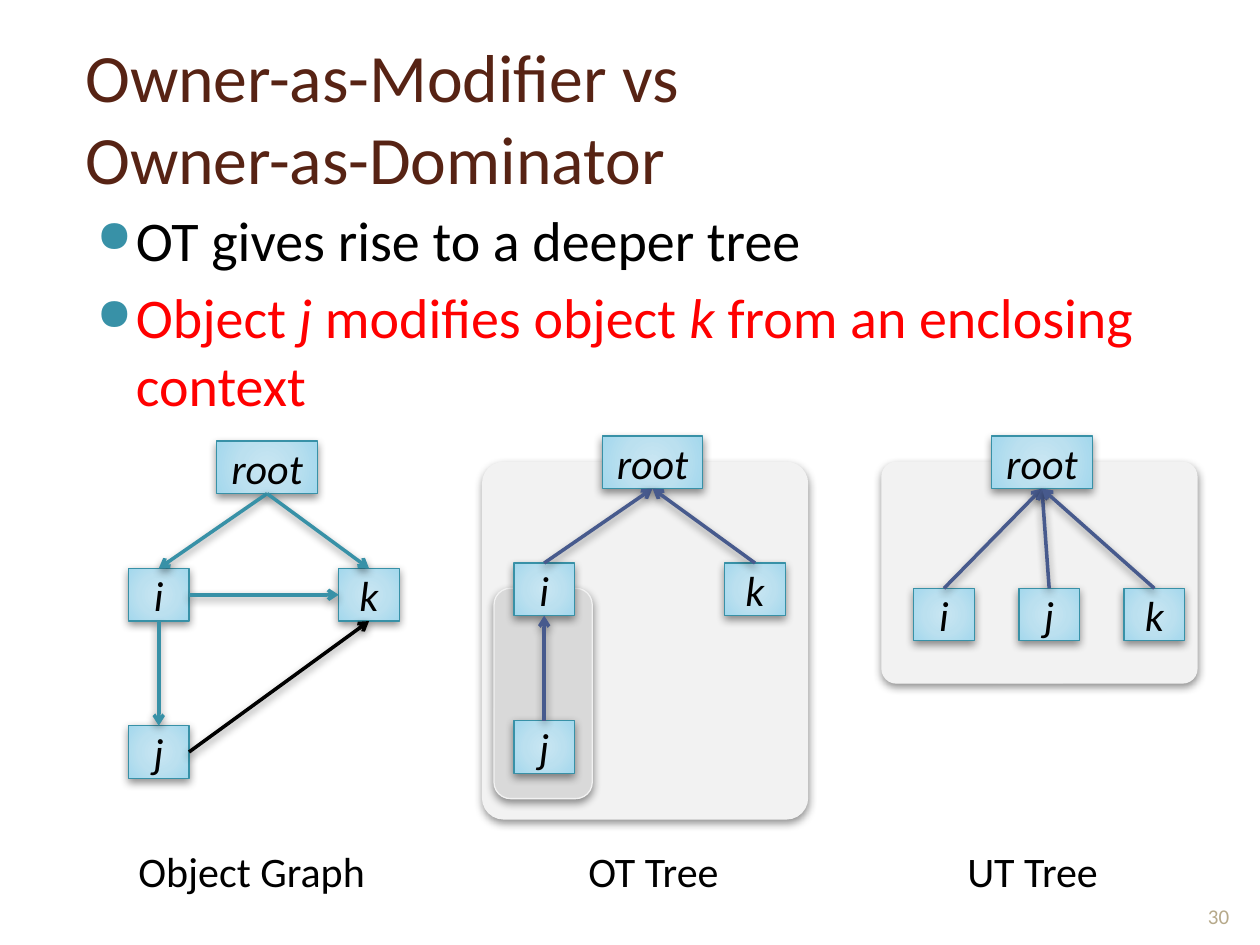
from pptx import Presentation
from pptx.dml.color import RGBColor
from pptx.enum.shapes import MSO_CONNECTOR, MSO_SHAPE
from pptx.enum.text import MSO_ANCHOR, PP_ALIGN
from pptx.oxml import parse_xml
from pptx.oxml.ns import nsdecls, qn
from pptx.util import Cm, Pt

STRAIGHT = MSO_CONNECTOR.STRAIGHT
RECTANGLE, ROUNDED = MSO_SHAPE.RECTANGLE, MSO_SHAPE.ROUNDED_RECTANGLE
TOP, MIDDLE, BOTTOM = MSO_ANCHOR.TOP, MSO_ANCHOR.MIDDLE, MSO_ANCHOR.BOTTOM
LEFT, CENTER = PP_ALIGN.LEFT, PP_ALIGN.CENTER

BLACK = RGBColor(0x00, 0x00, 0x00)
RED = RGBColor(0xFF, 0x00, 0x00)
BROWN = RGBColor(0x57, 0x23, 0x14)
TAN = RGBColor(0xB6, 0xA9, 0x8A)
TEAL = RGBColor(0x38, 0x91, 0xA7)
INDIGO = RGBColor(0x47, 0x5A, 0x8D)
PALE_GRAY = RGBColor(0xF2, 0xF2, 0xF2)
MID_GRAY = RGBColor(0xD9, 0xD9, 0xD9)
NODE_STOPS = [
    (0, RGBColor(0xC9, 0xE6, 0xF2)),
    (50, RGBColor(0xBB, 0xE0, 0xEF)),
    (97, RGBColor(0xA4, 0xD8, 0xED)),
    (100, RGBColor(0x9B, 0xD7, 0xEE)),
]

SITE_TOP, SITE_LEFT, SITE_BOTTOM, SITE_RIGHT = range(4)
NODE_HEIGHT = 1.06
ROOT_WIDTH, CHILD_WIDTH = 2.03, 1.22


def add_run(paragraph, text, size, color, italic=False):
    run = paragraph.add_run()
    run.text = text
    run.font.name = "Calibri"
    run.font.size = Pt(size)
    run.font.color.rgb = color
    run.font.italic = italic


def cast_shadow(shape):
    """Give a shape or connector a soft shadow straight below it."""
    shape._element.spPr.append(parse_xml(
        f'<a:effectLst {nsdecls("a")}>'
        '<a:outerShdw blurRad="63500" dist="25400" dir="5400000" rotWithShape="0">'
        '<a:srgbClr val="000000"><a:alpha val="43000"/></a:srgbClr>'
        '</a:outerShdw></a:effectLst>'))


presentation = Presentation()
presentation.slide_width, presentation.slide_height = Cm(25.4), Cm(19.05)
slide = presentation.slides.add_slide(presentation.slide_layouts[6])

# Title, captions and page number: left, top, width, height, lines, style
texts = [
    (1.47, 0.76, 22.53, 3.18, ["Owner-as-Modifier vs ", "Owner-as-Dominator"],
     38.7, BROWN, MIDDLE, LEFT),
    (2.54, 16.92, 5.33, 1.27, ["Object Graph"], 24, BLACK, TOP, LEFT),
    (11.61, 16.92, 4.47, 1.27, ["OT Tree"], 24, BLACK, TOP, LEFT),
    (19.25, 16.92, 4.47, 1.27, ["UT Tree"], 24, BLACK, TOP, LEFT),
    (23.93, 17.53, 1.27, 1.32, ["30"], 12, TAN, BOTTOM, CENTER),
]
for left, top, width, height, lines, size, color, anchor, alignment in texts:
    frame = slide.shapes.add_textbox(Cm(left), Cm(top), Cm(width), Cm(height)).text_frame
    frame.word_wrap = True
    frame.vertical_anchor = anchor
    paragraph = frame.paragraphs[0]
    paragraph.alignment = alignment
    for number, line in enumerate(lines):
        if number:
            paragraph.add_line_break()
        add_run(paragraph, line, size, color)

# Bullets: colour and (text, italic) runs
bullets = [
    (BLACK, [("OT gives rise to a deeper tree", False)]),
    (RED, [("Object ", False), ("j", True), (" modifies object ", False),
           ("k ", True), ("from an enclosing context", False)]),
]
body = slide.shapes.add_textbox(Cm(1.47), Cm(4.01), Cm(22.53), Cm(13.34)).text_frame
body.word_wrap = True
for number, (color, runs) in enumerate(bullets):
    paragraph = body.add_paragraph() if number else body.paragraphs[0]
    paragraph.space_before = Pt(6)
    properties = paragraph._p.get_or_add_pPr()
    properties.set("marL", str(Cm(1.02)))
    properties.set("indent", str(Cm(-0.79)))
    for bullet_xml in (f'<a:buClr {nsdecls("a")}><a:srgbClr val="{TEAL}"/></a:buClr>',
                       f'<a:buSzPct {nsdecls("a")} val="80000"/>',
                       f'<a:buChar {nsdecls("a")} char="●"/>'):
        properties.append(parse_xml(bullet_xml))
    for text, italic in runs:
        add_run(paragraph, text, 32, color, italic)

# Ownership contexts: left, top, width, height, fill, corner
contexts = [
    (9.73, 9.32, 6.55, 7.19, PALE_GRAY, 0.065),
    (9.96, 11.86, 1.98, 4.24, MID_GRAY, 0.167),
    (17.78, 9.32, 6.35, 4.45, PALE_GRAY, 0.065),
]
for left, top, width, height, color, corner in contexts:
    context = slide.shapes.add_shape(ROUNDED, Cm(left), Cm(top), Cm(width), Cm(height))
    context.adjustments[0] = corner
    context.fill.solid()
    context.fill.fore_color.rgb = color
    context.line.color.rgb = PALE_GRAY
    context.line.width = Pt(0.75)
    cast_shadow(context)

# Diagrams: node positions, arrow end, and edges (start, site, end, site, colour)
diagrams = [
    ({"root": (4.37, 8.89), "i": (2.59, 11.46), "k": (6.83, 11.46), "j": (2.59, 14.63)},
     "tailEnd",
     [("root", SITE_BOTTOM, "i", SITE_TOP, TEAL),
      ("i", SITE_BOTTOM, "j", SITE_TOP, TEAL),
      ("root", SITE_BOTTOM, "k", SITE_TOP, TEAL),
      ("j", SITE_RIGHT, "k", SITE_BOTTOM, BLACK),
      ("i", SITE_RIGHT, "k", SITE_LEFT, TEAL)]),
    ({"root": (12.14, 8.79), "i": (10.36, 11.35), "k": (14.61, 11.35), "j": (10.36, 14.53)},
     "headEnd",
     [("root", SITE_BOTTOM, "i", SITE_TOP, INDIGO),
      ("i", SITE_BOTTOM, "j", SITE_TOP, INDIGO),
      ("root", SITE_BOTTOM, "k", SITE_TOP, INDIGO)]),
    ({"root": (19.99, 8.79), "i": (18.42, 11.86), "k": (22.66, 11.86), "j": (20.54, 11.86)},
     "headEnd",
     [("root", SITE_BOTTOM, child, SITE_TOP, INDIGO) for child in "ijk"]),
]
stops = "".join(f'<a:gs pos="{position * 1000}"><a:srgbClr val="{color}"/></a:gs>'
                for position, color in NODE_STOPS)
for positions, arrow_end, edges in diagrams:
    nodes = {}
    for name, (left, top) in positions.items():
        width = ROOT_WIDTH if name == "root" else CHILD_WIDTH
        node = slide.shapes.add_shape(RECTANGLE, Cm(left), Cm(top), Cm(width), Cm(NODE_HEIGHT))
        node.fill.solid()
        properties = node._element.spPr
        properties.replace(properties.find(qn("a:solidFill")), parse_xml(
            f'<a:gradFill {nsdecls("a")} rotWithShape="1"><a:gsLst>{stops}</a:gsLst>'
            '<a:path path="circle">'
            '<a:fillToRect l="50000" t="50000" r="50000" b="50000"/></a:path></a:gradFill>'))
        node.line.color.rgb = TEAL
        node.line.width = Pt(0.75)
        cast_shadow(node)
        node.text_frame.vertical_anchor = MIDDLE
        paragraph = node.text_frame.paragraphs[0]
        paragraph.alignment = CENTER
        add_run(paragraph, name, 24, BLACK, italic=True)
        nodes[name] = node

    for start, start_site, end, end_site, color in edges:
        edge = slide.shapes.add_connector(STRAIGHT, 0, 0, 0, 0)
        edge.begin_connect(nodes[start], start_site)
        edge.end_connect(nodes[end], end_site)
        edge.line.color.rgb = color
        edge.line.width = Pt(2)
        edge.line._get_or_add_ln().append(
            parse_xml(f'<a:{arrow_end} {nsdecls("a")} type="arrow"/>'))
        cast_shadow(edge)

presentation.save("out.pptx")
